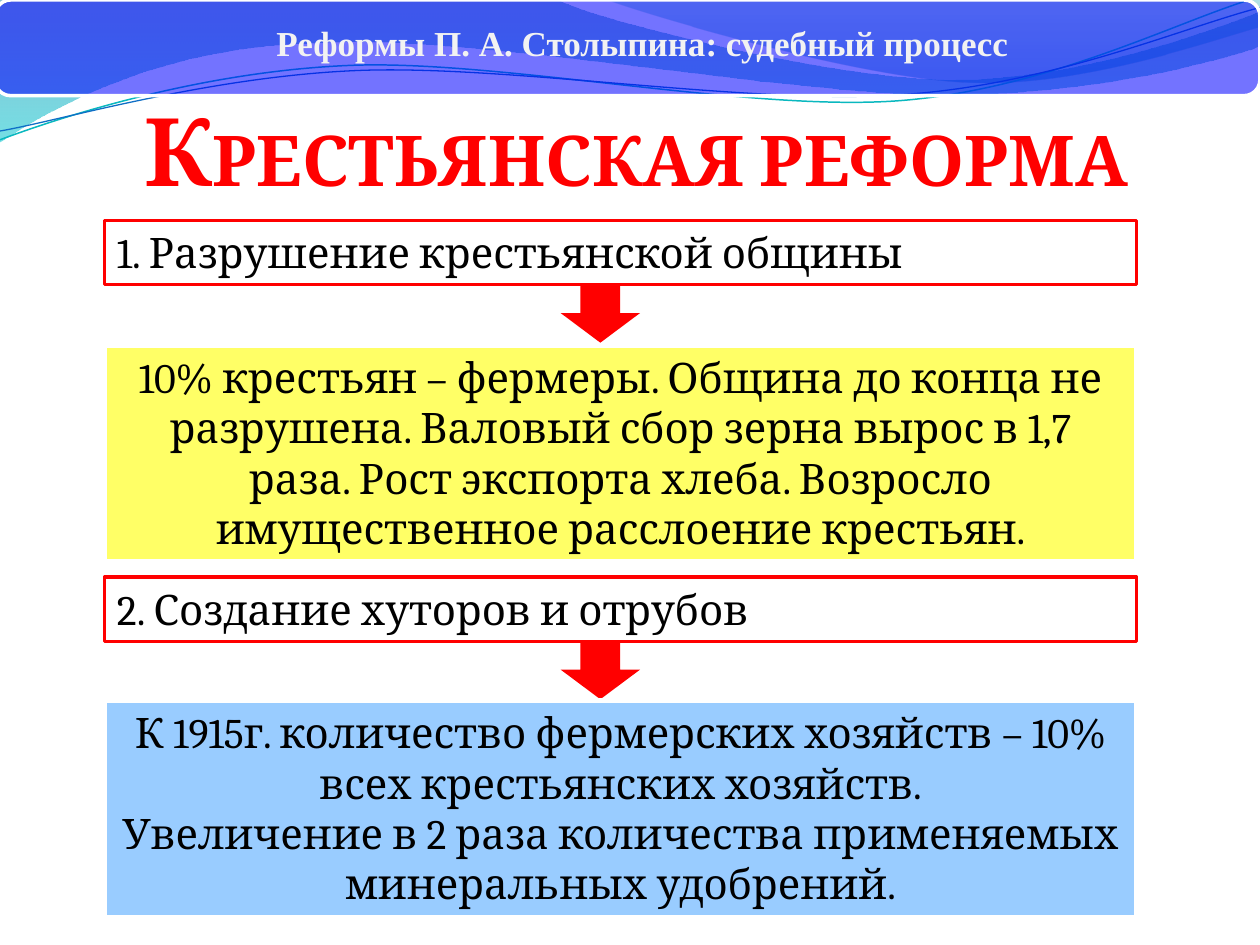
import math
from dataclasses import dataclass

from lxml import etree
from pptx import Presentation
from pptx import util as u
from pptx.dml.color import RGBColor
from pptx.enum import shapes, text
from pptx.oxml import ns

Inches = u.Inches


@dataclass(frozen=True)
class Theme:
    serif: str = "Cambria"
    roman: str = "Times New Roman"
    red: str = "FF0000"
    white: str = "FFFFFF"
    black: str = "000000"
    bar: str = "0000FF"
    pale: str = "F2F2F2"
    edge: str = "00A578"
    yellow: str = "FFFF66"
    sky: str = "99CCFF"
    aqua: str = "0AB8BF"
    navy: str = "0F6FC6"
    top: int = 20
    cap: int = 54
    title: int = 40
    body: int = 24


T = Theme()
TILT = 357.3

# Each wave: its box, then a start point and straight (2 numbers) or Bezier (6) steps.
FILLS = [
    ((-0.01, -0.01, 10.02, 1.14),
     [(0, 0), (4.4, -0.01), (4.76, 0.17, 6.64, 0.63, 7.58, 0.63),
      (8.53, 0.63, 9.58, 0.26, 10, 0.09), (10.01, 0.36),
      (9.83, 0.44, 8.7, 0.76, 7.46, 0.75), (6.22, 0.75, 3.82, 0.28, 2.57, 0.34),
      (1.29, 0.36, 0.46, 0.83, -0.01, 1.13), (0, 0)],
     [(0, "0074A1", 45), (1, "00C6CF", 55)]),
    ((4.79, -0.01, 5.21, 0.7),
     [(4.79, -0.01), (5.09, 0.11, 6.82, 0.62, 7.69, 0.65),
      (8.56, 0.69, 9.61, 0.32, 10, 0.21), (10, 0), (4.79, -0.01)],
     [(0, "00A1A9", 30), (0.8, "008BBF", 45)])]
STRANDS = [
    ((-0.02, 0.22, 10.02, 0.71),
     [(0, 1.11), (0.48, 0.93, 1.58, 0.57, 2.77, 0.52),
      (3.95, 0.47, 5.93, 0.89, 7.13, 0.8), (8.33, 0.71, 9.38, 0.15, 9.98, -0.02)],
     T.aqua, 0.85),
    ((-0.02, 0.3, 10.03, 0.58),
     [(0, 1.04), (0.47, 0.96, 1.64, 0.61, 2.83, 0.56),
      (4.03, 0.51, 5.97, 0.84, 7.17, 0.75), (8.36, 0.67, 9.41, 0.21, 10, 0.06)],
     T.navy, 0.75)]


def rgb(code):
    return RGBColor.from_string(code)


def sub(node, tag, **attrs):
    return etree.SubElement(node, ns.qn(tag), {k: str(v) for k, v in attrs.items()})


def fade(shape, *shares):
    """Set the opacity, in percent, of each colour of a shape's fill."""
    colors = shape.fill._xPr.iter(ns.qn("a:srgbClr"))
    for color, share in zip(colors, shares):
        sub(color, "a:alpha", val=share * 1000)


def paint(shape, fill=None, line=None, width=1):
    shape.shadow.inherit = False
    if fill:
        shape.fill.solid()
        shape.fill.fore_color.rgb = rgb(fill)
    else:
        shape.fill.background()
    if line:
        shape.line.color.rgb = rgb(line)
        shape.line.width = u.Pt(width)
    else:
        shape.line.fill.background()


def style(para, size, color, name=T.serif, bold=False, align=text.PP_ALIGN.CENTER):
    para.alignment = align
    font = para.font
    font.size, font.name, font.bold = u.Pt(size), name, bold
    font.color.rgb = rgb(color)


def setup(frame):
    frame.word_wrap = True
    frame.auto_size = text.MSO_AUTO_SIZE.SHAPE_TO_FIT_TEXT
    frame.vertical_anchor = text.MSO_ANCHOR.TOP


def wave(slide, box, steps, tilt=0):
    """Draw a curved outline in its box; steps are where it shows after the tilt."""
    x, y, w, h = box
    pen = slide.shapes.build_freeform(Inches(x), Inches(y))
    pen.add_line_segments([(Inches(x + w), Inches(y + h))], close=False)
    shape = pen.convert_to_shape()
    shape.rotation = tilt
    turn = math.radians(-tilt)
    cos, sin = math.cos(turn), math.sin(turn)
    track = next(shape.fill._xPr.iter(ns.qn("a:path")))
    for old in list(track):
        track.remove(old)
    for i, step in enumerate(steps):
        tag = "a:cubicBezTo" if len(step) == 6 else "a:lnTo" if i else "a:moveTo"
        node = sub(track, tag)
        for px, py in zip(step[::2], step[1::2]):
            dx, dy = px - x - w / 2, py - y - h / 2
            sub(node, "a:pt", x=Inches(dx * cos - dy * sin + w / 2),
                y=Inches(dx * sin + dy * cos + h / 2))
    if steps[0] == steps[-1]:
        track.remove(track[-1])
        sub(track, "a:close")
    return shape


def blend(shape, stops):
    """Fill from top to bottom with (position, colour, opacity) stops."""
    shape.fill.gradient()
    shape.fill.gradient_angle = 270
    for stop, (place, code, _) in zip(shape.fill.gradient_stops, stops):
        stop.position = place
        stop.color.rgb = rgb(code)
    fade(shape, *(share for _, _, share in stops))


def waves(slide):
    for box, steps, stops in FILLS:
        shape = wave(slide, box, steps)
        paint(shape)
        blend(shape, stops)
    for box, steps, color, width in STRANDS:
        paint(wave(slide, box, steps, TILT), line=color, width=width)


def header(slide, x, y, w, h):
    bar = slide.shapes.add_shape(shapes.MSO_SHAPE.ROUNDED_RECTANGLE,
                                 Inches(x), Inches(y), Inches(w), Inches(h))
    paint(bar, T.bar, T.white, 2)
    fade(bar, 55)
    label = slide.shapes.add_textbox(Inches(x + 0.71), Inches(y + 0.12),
                                     Inches(8.86), Inches(0.44))
    setup(label.text_frame)
    para = label.text_frame.paragraphs[0]
    para.text = "Реформы П. А. Столыпина: судебный процесс"
    style(para, T.top, T.pale, T.roman, True)


def heading(slide, x, y, w, h):
    title = slide.shapes.title
    title.left, title.top, title.width, title.height = map(Inches, (x, y, w, h))
    setup(title.text_frame)
    para = title.text_frame.paragraphs[0]
    style(para, T.title, T.red, bold=True)
    for words, size in (("К", T.cap), ("РЕСТЬЯНСКАЯ РЕФОРМА", T.title)):
        run = para.add_run()
        run.text = words
        run.font.size = u.Pt(size)
        line = etree.Element(ns.qn("a:ln"), w=str(u.Pt(0.71)))
        sub(sub(line, "a:solidFill"), "a:srgbClr", val=T.edge)
        run.font._element.insert(0, line)


def panel(slide, box, lines, fill, line, width, align):
    shape = slide.shapes.add_shape(shapes.MSO_SHAPE.RECTANGLE, *map(Inches, box))
    paint(shape, fill, line, width)
    frame = shape.text_frame
    setup(frame)
    frame.text = "\n".join(lines)
    for para in frame.paragraphs:
        style(para, T.body, T.black, align=align)


def measure(slide, x, y, w, h, head, result, fill):
    """A measure of the reform, an arrow, and its result."""
    top, base = 0.51, 1.72
    panel(slide, (x, y, w, top), [head], T.white, T.red, 2, text.PP_ALIGN.LEFT)
    arrow = slide.shapes.add_shape(shapes.MSO_SHAPE.DOWN_ARROW, Inches(x + 3.62),
                                   Inches(y + top - 0.01), Inches(0.63), Inches(0.47))
    paint(arrow, T.red)
    panel(slide, (x, y + h - base, w, base), result, fill, T.white, 3,
          text.PP_ALIGN.CENTER)


def main():
    deck = Presentation()
    deck.slide_width, deck.slide_height = Inches(10), Inches(7.5)
    slide = deck.slides.add_slide(deck.slide_layouts[5])
    waves(slide)
    header(slide, -0.04, 0, 10.04, 0.76)
    heading(slide, 0.2, 0.68, 9.7, 1.01)
    measure(slide, 0.83, 1.75, 8.19, 2.71, "1. Разрушение крестьянской общины",
            ["10% крестьян – фермеры. Община до конца не разрушена. Валовый сбор зерна "
             "вырос в 1,7 раза. Рост экспорта хлеба. Возросло имущественное расслоение "
             "крестьян."], T.yellow)
    measure(slide, 0.83, 4.58, 8.19, 2.7, "2. Создание хуторов и отрубов",
            ["К 1915г. количество фермерских хозяйств – 10% всех крестьянских хозяйств.",
             "Увеличение в 2 раза количества применяемых минеральных удобрений."], T.sky)
    deck.save("out.pptx")


if __name__ == "__main__":
    main()
